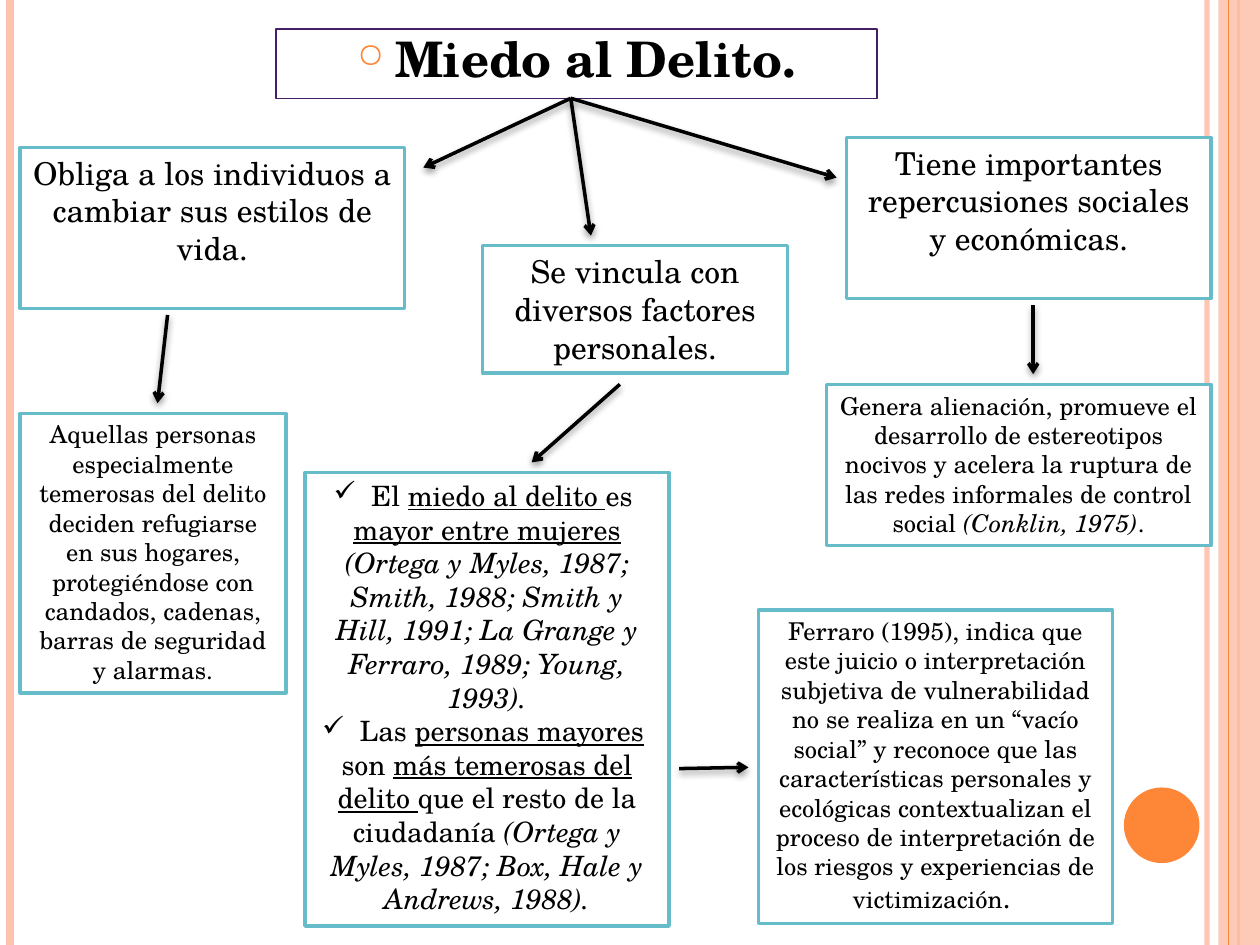
import pptx
import pptx.util
import pptx.dml.color
import pptx.enum.shapes
import pptx.enum.text
import pptx.oxml
import pptx.oxml.ns

PX = 9144  # EMU per px, 100 px to the inch
W, H = 1000, 750
FONT = "TeX Gyre Schola"
COLORS = {"text": "000000", "box": "FFFFFF", "border": "66BCC8",
          "title_border": "461E64", "accent": "FE8637", "band": "FEC3AE"}
SHAPE = pptx.enum.shapes.MSO_SHAPE
ALIGN = pptx.enum.text.PP_ALIGN
ANCHOR = pptx.enum.text.MSO_ANCHOR


def rgb(name):
    return pptx.dml.color.RGBColor.from_string(COLORS[name])


def add_xml(parent, xml):
    """Append a drawing element written with the a: prefix."""
    ns = pptx.oxml.ns.nsdecls("a")
    tag, rest = xml[1:].split(" ", 1)
    parent.append(pptx.oxml.parse_xml(f"<{tag} {ns} {rest}"))


def set_alpha(fill, percent):
    """Make the colour of a solid fill partly transparent."""
    color = fill._xPr.find(".//" + pptx.oxml.ns.qn("a:srgbClr"))
    add_xml(color, f'<a:alpha val="{percent * 1000}"/>')


class Board:
    def __init__(self, prs):
        self.s = prs.slides.add_slide(prs.slide_layouts[5])

    def shape(self, kind, x, y, w, h, fill, border=None):
        sp = self.s.shapes.add_shape(kind, x * PX, y * PX, w * PX, h * PX)
        sp.shadow.inherit = False
        sp.fill.solid()
        sp.fill.fore_color.rgb = rgb(fill)
        if border:
            sp.line.color.rgb = rgb(border)
            sp.line.width = pptx.util.Pt(2)
        else:
            sp.line.fill.background()
        return sp

    def line(self, start, end, color, width):
        cn = self.s.shapes.add_connector(
            pptx.enum.shapes.MSO_CONNECTOR.STRAIGHT,
            *(v * PX for v in (*start, *end)))
        cn.line.color.rgb = rgb(color)
        cn.line.width = pptx.util.Pt(width)
        add_xml(cn._element.spPr, "<a:effectLst />")
        return cn

    def arrow(self, start, end):
        cn = self.line(start, end, "text", 2)
        add_xml(cn.line._get_or_add_ln(), '<a:tailEnd type="arrow"/>')
        add_xml(cn._element.spPr[-1],
                '<a:outerShdw blurRad="50800" dist="25400" dir="5400000" rotWithShape="0">'
                '<a:srgbClr val="000000"><a:alpha val="40000"/></a:srgbClr></a:outerShdw>')

    def run(self, p, text, size, marks=""):
        r = p.add_run()
        r.text = text
        r.font.name = FONT
        r.font.size = pptx.util.Pt(size)
        r.font.color.rgb = rgb("text")
        r.font.bold = "b" in marks
        r.font.italic = "i" in marks
        r.font.underline = "u" in marks

    def title(self, text, x, y, w, h):
        sp = self.s.shapes.title
        sp.left, sp.top, sp.width, sp.height = (v * PX for v in (x, y, w, h))
        sp.line.color.rgb = rgb("title_border")
        sp.line.width = pptx.util.Pt(0.75)
        tf = sp.text_frame
        tf.word_wrap = True
        tf.auto_size = pptx.enum.text.MSO_AUTO_SIZE.NONE
        tf.vertical_anchor = ANCHOR.MIDDLE
        p = tf.paragraphs[0]
        p.alignment = ALIGN.CENTER
        p.line_spacing = 0.8
        p.space_before = pptx.util.Pt(6)
        pPr = p._p.get_or_add_pPr()
        pPr.set("marL", str(30 * PX))
        pPr.set("indent", str(-30 * PX))
        add_xml(pPr, f'<a:buClr ><a:srgbClr val="{COLORS["accent"]}"/></a:buClr>')
        add_xml(pPr, '<a:buSzPct val="70000"/>')
        add_xml(pPr, '<a:buChar char="○"/>')
        self.run(p, text, 28, "b")

    def box(self, x, y, w, h, size, *paragraphs, bullet=None):
        """Bordered box; a paragraph is a list of (text, marks[, size])."""
        sp = self.shape(SHAPE.RECTANGLE, x, y, w, h, "box", "border")
        tf = sp.text_frame
        tf.word_wrap = True
        tf.vertical_anchor = ANCHOR.TOP
        for i, runs in enumerate(paragraphs):
            p = tf.add_paragraph() if i else tf.paragraphs[0]
            p.alignment = ALIGN.CENTER
            if bullet:
                add_xml(p._p.get_or_add_pPr(), f'<a:buChar char="{bullet}"/>')
            for text, marks, *own_size in runs:
                self.run(p, text, own_size[0] if own_size else size, marks)

    def frame(self):
        """Side bands and the disc at the lower right."""
        for x, color, width in ((958, "band", 3), (8, "band", 4.5),
                                (983, "accent", 1.5)):
            cn = self.line((x, 0), (x, H), color, width)
            if width == 3:
                set_alpha(cn.line.fill, 93)
        band = self.shape(SHAPE.RECTANGLE, 967, 0, 33, H, "band")
        set_alpha(band.fill, 87)
        self.line((975, 0), (975, H), "accent", 0.75)
        self.shape(SHAPE.OVAL, 892, 625, 60, 60, "accent")


def main():
    prs = pptx.Presentation()
    prs.slide_width, prs.slide_height = W * PX, H * PX
    board = Board(prs)
    board.frame()
    board.title("Miedo al Delito.", 219, 23, 477, 55)

    board.box(16, 117, 305, 128, 18,
              [("Obliga a los individuos a cambiar sus estilos de vida.", "")])
    board.box(16, 328, 211, 222, 14,
              [("Aquellas personas especialmente temerosas del delito deciden "
                "refugiarse en sus hogares, protegiéndose con candados, cadenas, "
                "barras de seguridad y alarmas.", "")])
    board.box(672, 109, 289, 128, 18,
              [("Tiene importantes repercusiones sociales y económicas.", "")])
    board.box(656, 305, 305, 128, 14,
              [("Genera alienación, promueve el desarrollo de estereotipos nocivos "
                "y acelera la ruptura de las redes informales de control social ", ""),
               ("(Conklin, 1975)", "i"), (".", "")])
    board.box(383, 195, 242, 101, 18,
              [("Se vincula con diversos factores personales.", "")])
    board.box(242, 375, 289, 360, 16,
              [(" El ", ""), ("miedo al delito ", "u"), ("es ", ""),
               ("mayor entre mujeres ", "u"),
               ("(Ortega y Myles, 1987; Smith, 1988; Smith y Hill, 1991; "
                "La Grange y Ferraro, 1989; Young, 1993).", "i")],
              [(" Las ", ""), ("personas mayores", "u"), (" son ", ""),
               ("más temerosas del delito ", "u"),
               ("que el resto de la ciudadanía ", ""),
               ("(Ortega y Myles, 1987; Box, Hale y Andrews, 1988).", "i")],
              bullet="✓")
    board.box(602, 484, 281, 249, 14,
              [("Ferraro (1995), indica que este juicio o interpretación subjetiva "
                "de vulnerabilidad no se realiza en un “vacío social” y reconoce que "
                "las características personales y ecológicas contextualizan el "
                "proceso de interpretación de los riesgos y experiencias de "
                "victimización", ""), (". ", "", 16)])

    title_foot = (453, 78)
    for end in ((336, 133), (664, 141), (469, 187)):
        board.arrow(title_foot, end)
    for start, end in (((133, 250), (125, 320)), ((820, 242), (820, 297)),
                       ((492, 305), (422, 367)), ((539, 610), (594, 609))):
        board.arrow(start, end)
    prs.save("out.pptx")


if __name__ == "__main__":
    main()
